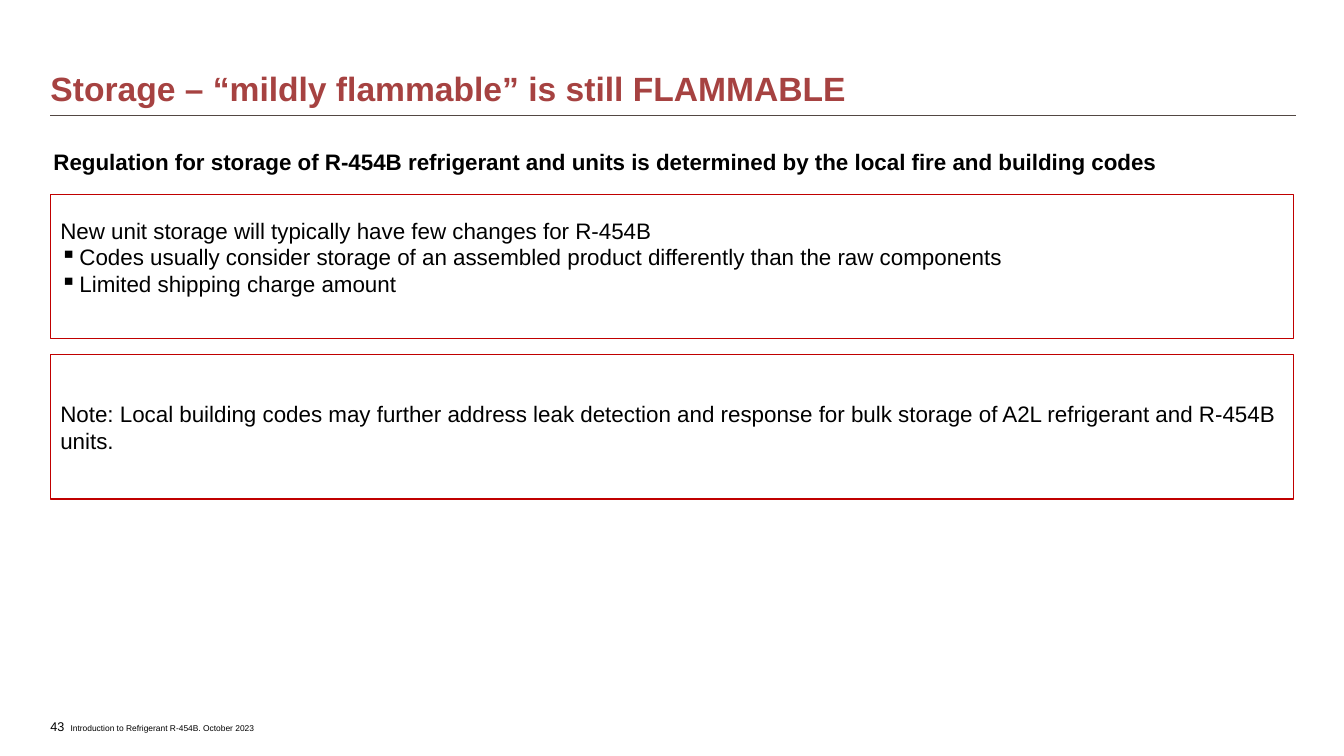
import lxml.etree
import pptx
import pptx.dml.color
import pptx.enum.shapes
import pptx.enum.text
import pptx.oxml.ns
import pptx.util

Inches = pptx.util.Inches
Pt = pptx.util.Pt
ANCHOR = pptx.enum.text.MSO_ANCHOR

WIDTH, HEIGHT = 13.33, 7.5
MARGIN = 0.5
CONTENT = WIDTH - 2 * MARGIN
BOX_TOP, BOX_HEIGHT, BOX_PITCH = 1.93, 1.43, 1.59
BLACK, RED, TITLE_RED, GREY = "000000", "C00000", "A64241", "524743"


def color(value):
    return pptx.dml.color.RGBColor.from_string(value)


def place(sp, left, top, width, height):
    sp.left, sp.top = Inches(left), Inches(top)
    sp.width, sp.height = Inches(width), Inches(height)


def frame(sp, anchor, insets):
    """Set wrapping, anchor and insets (left, top, right, bottom)."""
    tf = sp.text_frame
    tf.word_wrap = True
    tf.auto_size = pptx.enum.text.MSO_AUTO_SIZE.NONE
    tf.vertical_anchor = anchor
    tf.margin_left, tf.margin_top, tf.margin_right, tf.margin_bottom = map(Inches, insets)
    return tf


def set_bullet(p, char=None):
    """Give the paragraph a hanging bullet, or remove an inherited one."""
    pPr = p._p.get_or_add_pPr()
    indent = Inches(0.19) if char else 0
    pPr.set("marL", str(indent))
    pPr.set("indent", str(-indent))
    tag = "a:buChar" if char else "a:buNone"
    bu = lxml.etree.SubElement(pPr, pptx.oxml.ns.qn(tag))
    if char:
        bu.set("char", char)


def write(p, text, size, fill=BLACK, bold=False, bullet=None):
    set_bullet(p, bullet)
    p.alignment = pptx.enum.text.PP_ALIGN.LEFT
    p.space_before = p.space_after = Pt(0)
    r = p.add_run()
    r.text = text
    r.font.name, r.font.size, r.font.bold = "Arial", Pt(size), bold
    r.font.color.rgb = color(fill)


def add_rule(s, top):
    line = s.shapes.add_connector(
        pptx.enum.shapes.MSO_CONNECTOR.STRAIGHT,
        Inches(MARGIN), Inches(top), Inches(12.85), Inches(top))
    line.line.color.rgb = color(GREY)
    line.line.width = Pt(0.75)
    lxml.etree.SubElement(line._element.spPr, pptx.oxml.ns.qn("a:effectLst"))


def add_label(s, left, top, width, height, text, size, anchor):
    sp = s.shapes.add_textbox(*map(Inches, (left, top, width, height)))
    write(frame(sp, anchor, (0, 0, 0, 0)).paragraphs[0], text, size)


def add_box(s, row, text, bullets=(), bottom=0.05):
    sp = s.shapes.add_shape(
        pptx.enum.shapes.MSO_SHAPE.RECTANGLE,
        *map(Inches, (MARGIN, BOX_TOP + row * BOX_PITCH, CONTENT, BOX_HEIGHT)))
    sp.shadow.inherit = False
    sp.fill.background()
    sp.line.color.rgb = color(RED)
    sp.line.width = Pt(1)
    tf = frame(sp, ANCHOR.MIDDLE, (0.1, 0.05, 0.1, bottom))
    write(tf.paragraphs[0], text, 16)
    for item in bullets:
        write(tf.add_paragraph(), item, 16, bullet="▪")


def main():
    prs = pptx.Presentation()
    prs.slide_width, prs.slide_height = Inches(WIDTH), Inches(HEIGHT)
    s = prs.slides.add_slide(prs.slide_layouts[1])

    add_rule(s, 1.15)
    add_label(s, MARGIN, 7.09, 0.39, 0.24, "43", 9, ANCHOR.MIDDLE)
    add_label(s, 0.7, 7.17, 2.2, 0.1,
              "Introduction to Refrigerant R-454B. October 2023", 6, ANCHOR.TOP)

    title, body = s.placeholders
    place(title, MARGIN, 0.21, 12.35, 0.87)
    p = frame(title, ANCHOR.BOTTOM, (0, 0, 0, 0)).paragraphs[0]
    write(p, "Storage – “mildly flammable” is still FLAMMABLE", 24, TITLE_RED, True)
    p.line_spacing = 0.9

    place(body, 0.53, 1.39, 12.35, 0.55)
    p = frame(body, ANCHOR.TOP, (0, 0.05, 0.1, 0.05)).paragraphs[0]
    write(p, "Regulation for storage of R-454B refrigerant and units is determined "
             "by the local fire and building codes", 16, bold=True)
    p.line_spacing = Pt(21)

    add_box(s, 0, "New unit storage will typically have few changes for R-454B", (
        "Codes usually consider storage of an assembled product differently than the raw components",
        "Limited shipping charge amount"), bottom=0.24)
    add_box(s, 1, "Note: Local building codes may further address leak detection and response "
                  "for bulk storage of A2L refrigerant and R-454B units.")
    prs.save("out.pptx")


if __name__ == "__main__":
    main()
